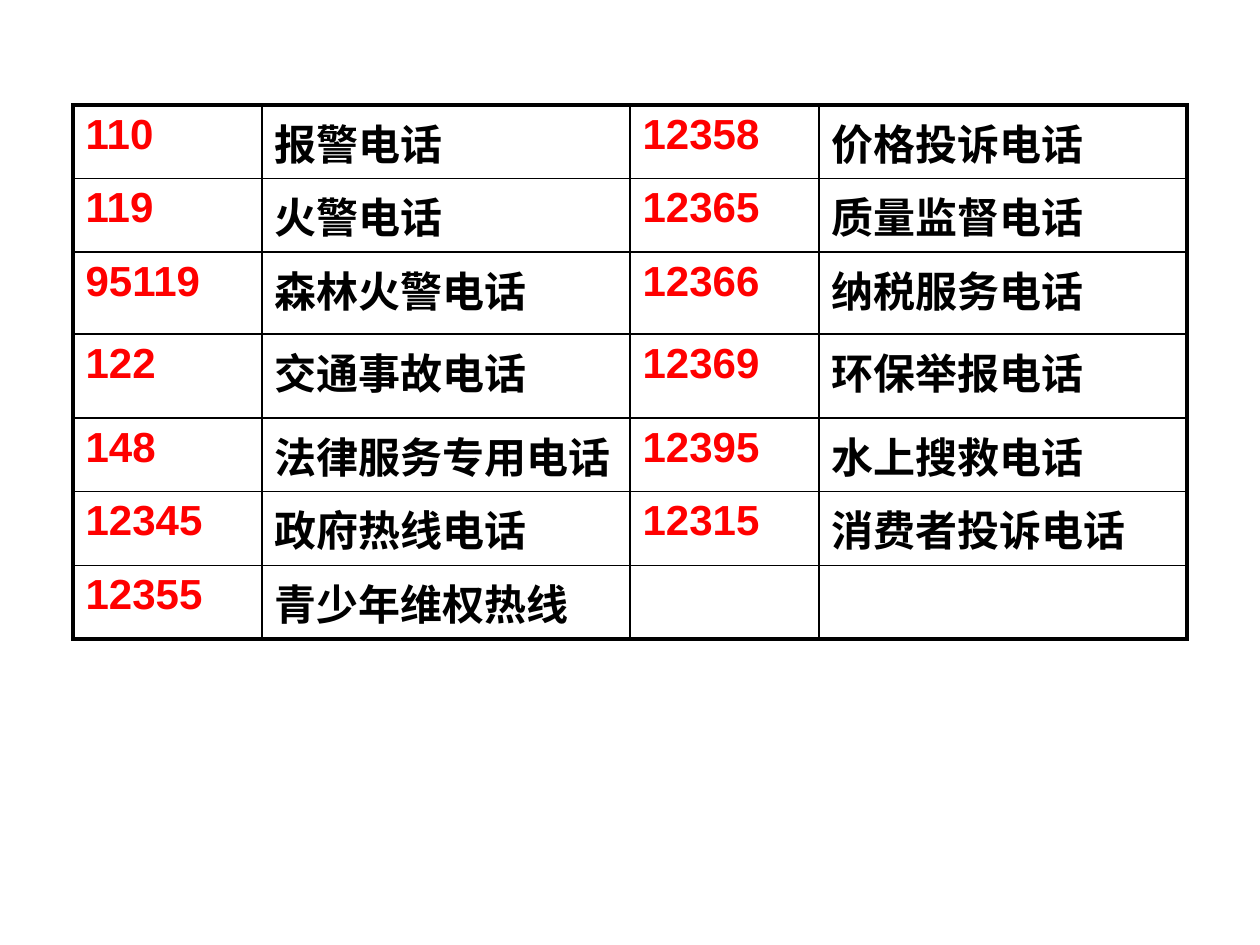
from lxml.etree import SubElement
from pptx import Presentation
from pptx.dml.color import RGBColor as Rgb
from pptx.oxml.ns import qn
from pptx.util import Emu, Pt

THEME = {
    "font": "Arial", "size": 24, "thin": 1, "thick": 2.25,
    "line": "000000", "code": "FF0000", "label": "000000",
}
SCALE = 914400 / 126


def px(num):
    return Emu(round(num * SCALE))


def put(cell, text, color, size=THEME["size"], bold=True, gap=20):
    """Write text into a cell; gap is the space before, in percent of a line."""
    para = cell.text_frame.paragraphs[0]
    props = para._p.get_or_add_pPr()
    SubElement(SubElement(props, qn("a:spcBef")), qn("a:spcPct"), val=str(gap * 1000))
    run = para.add_run()
    run.text = text
    run.font.name = THEME["font"]
    run.font.size = Pt(size)
    run.font.bold = bold
    run.font.color.rgb = Rgb.from_string(color)


ROWS = [
    ("110", "报警电话", "12358", "价格投诉电话"),
    ("119", "火警电话", "12365", "质量监督电话"),
    ("95119", "森林火警电话", "12366", "纳税服务电话"),
    ("122", "交通事故电话", "12369", "环保举报电话"),
    ("148", "法律服务专用电话", "12395", "水上搜救电话"),
    ("12345", "政府热线电话", "12315", "消费者投诉电话"),
    ("12355", "青少年维权热线", "", ""),
]
WIDTHS = [189, 368, 189, 368]
HEIGHTS = [73, 73, 82, 84, 73, 63, 63]

deck = Presentation()
deck.slide_width, deck.slide_height = px(1260), px(945)
slide = deck.slides.add_slide(deck.slide_layouts[6])

table = slide.shapes.add_table(
    len(ROWS), len(WIDTHS), px(73), px(105), px(sum(WIDTHS)), px(sum(HEIGHTS))
).table
table.first_row = table.horz_banding = False
for col, width in zip(table.columns, WIDTHS):
    col.width = px(width)
for row, height in zip(table.rows, HEIGHTS):
    row.height = px(height)

for r, words in enumerate(ROWS):
    for c, text in enumerate(words):
        cell = table.cell(r, c)
        if text:
            put(cell, text, THEME["label" if c % 2 else "code"])

        # Outer edges are thick, inner ones thin
        outer = {
            "L": c == 0, "R": c == len(WIDTHS) - 1,
            "T": r == 0, "B": r == len(ROWS) - 1,
        }
        props = cell._tc.get_or_add_tcPr()
        for side, edge in outer.items():
            width = Pt(THEME["thick" if edge else "thin"])
            line = SubElement(props, qn(f"a:ln{side}"), w=str(width))
            fill = SubElement(line, qn("a:solidFill"))
            SubElement(fill, qn("a:srgbClr"), val=THEME["line"])
        cell.fill.background()

deck.save("out.pptx")
